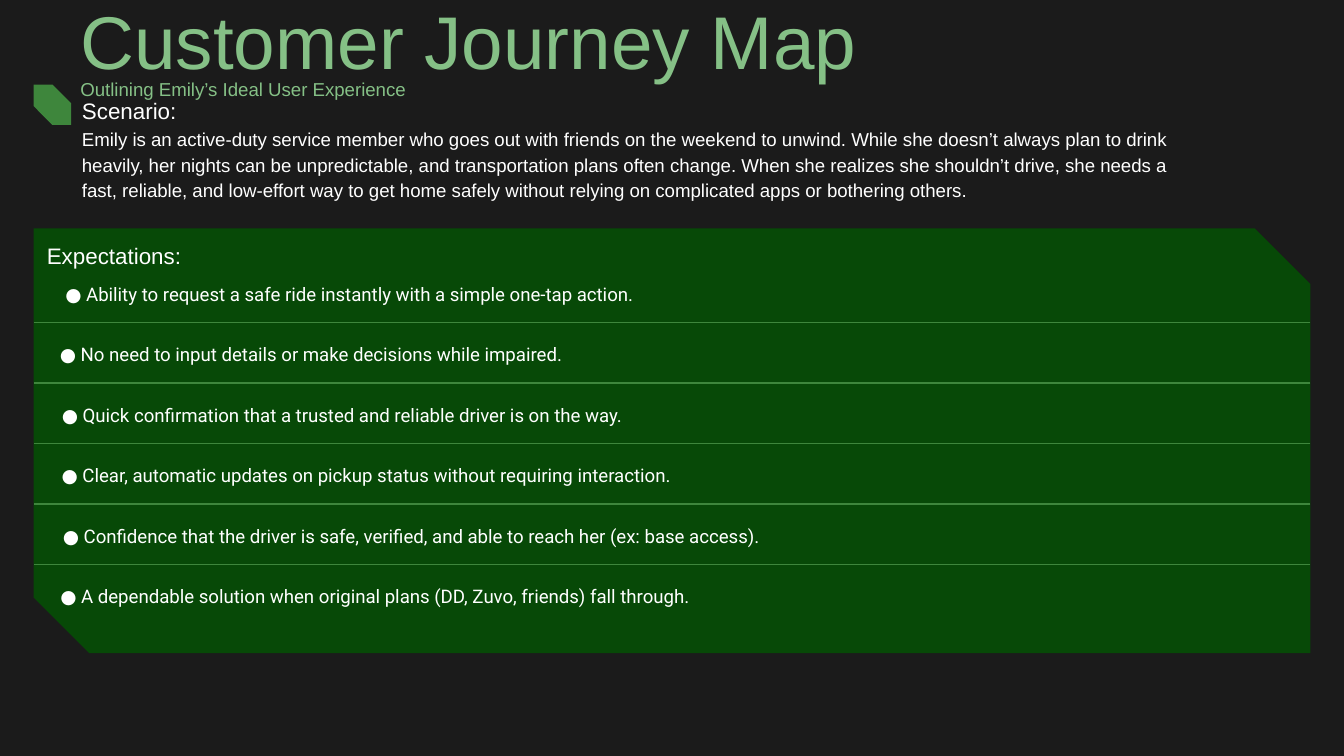
from lxml.etree import SubElement
from pptx import Presentation
from pptx.dml.color import RGBColor
from pptx.enum.shapes import MSO_CONNECTOR, MSO_SHAPE
from pptx.enum.text import MSO_ANCHOR as Anchor, MSO_AUTO_SIZE as AutoSize, PP_ALIGN as Align
from pptx.oxml.ns import qn
from pptx.util import Inches, Pt

BACKGROUND, PANEL, ACCENT, HEADING, WHITE = "1B1B1B", "074907", "3E863C", "85C086", "FFFFFF"

TITLE = "Customer Journey Map"
SUBTITLE = "Outlining Emily’s Ideal User Experience"
SCENARIO = [
    ("Scenario:", 12),
    ("Emily is an active-duty service member who goes out with friends on the weekend to unwind. "
     "While she doesn’t always plan to drink heavily, her nights can be unpredictable, and "
     "transportation plans often change. When she realizes she shouldn’t drive, she needs a fast, "
     "reliable, and low-effort way to get home safely without relying on complicated apps or "
     "bothering others.", 10),
]
# Each expectation with the width of its centred text
EXPECTATIONS = [
    ("Ability to request a safe ride instantly with a simple one-tap action.", 4.39),
    ("No need to input details or make decisions while impaired.", 3.82),
    ("Quick confirmation that a trusted and reliable driver is on the way.", 4.28),
    ("Clear, automatic updates on pickup status without requiring interaction.", 4.64),
    ("Confidence that the driver is safe, verified, and able to reach her (ex: base access).", 5.31),
    ("A dependable solution when original plans (DD, Zuvo, friends) fall through.", 4.77),
]

SLIDE_W = 10
SLIDE_H = SLIDE_W * 9 / 16
MARGIN = 0.25
PANEL_TOP, PANEL_H = 1.7, 3.16
ROW_LEFT, ROW_TOP, ROW_H = 0.42, 1.95, 0.45

PADDED = {"margin_left": Inches(0.1), "margin_top": Inches(0.1),
          "margin_right": Inches(0.1), "margin_bottom": Inches(0.1),
          "vertical_anchor": Anchor.TOP, "auto_size": AutoSize.SHAPE_TO_FIT_TEXT}
FLUSH = {"margin_left": 0, "margin_top": 0, "margin_right": 0, "margin_bottom": 0,
         "auto_size": AutoSize.NONE}


def color(hex_value):
    return RGBColor.from_string(hex_value)


def write(shape, paragraphs, frame_format, hex_value, font="Arial", spacing=1.0, align=Align.LEFT):
    """Fill a shape with (text, point size) paragraphs."""
    frame = shape.text_frame
    frame.word_wrap = True
    for name, value in frame_format.items():
        setattr(frame, name, value)
    for index, (text, size) in enumerate(paragraphs):
        paragraph = frame.add_paragraph() if index else frame.paragraphs[0]
        paragraph.alignment, paragraph.line_spacing = align, spacing
        run = paragraph.add_run()
        run.text = text
        run.font.name, run.font.size = font, Pt(size)
        run.font.color.rgb = color(hex_value)


def add_text(slide, box, *args, **kwargs):
    write(slide.shapes.add_textbox(*map(Inches, box)), *args, **kwargs)


def add_snipped(slide, box, snip, fill):
    shape = slide.shapes.add_shape(MSO_SHAPE.SNIP_2_DIAG_RECTANGLE, *map(Inches, box))
    shape.adjustments[0], shape.adjustments[1] = 0, snip
    shape.shadow.inherit = False
    shape.fill.solid()
    shape.fill.fore_color.rgb = color(fill)
    shape.line.fill.background()


def add_divider(slide, y):
    ends = map(Inches, (SLIDE_W - MARGIN, y, MARGIN, y))
    divider = slide.shapes.add_connector(MSO_CONNECTOR.STRAIGHT, *ends)
    divider.line.color.rgb = color(ACCENT)
    divider.line.width = Pt(0.75)
    SubElement(divider._element.spPr, qn("a:effectLst"))


def main():
    deck = Presentation()
    deck.slide_width, deck.slide_height = Inches(SLIDE_W), Inches(SLIDE_H)
    slide = deck.slides.add_slide(deck.slide_layouts[5])
    slide.background.fill.solid()
    slide.background.fill.fore_color.rgb = color(BACKGROUND)

    title = slide.shapes.title
    title.left, title.top, title.width, title.height = map(Inches, (0.6, -0.06, 6.24, 0.96))
    write(title, [(TITLE, 40)], {**PADDED, "margin_left": 0}, HEADING, spacing=0.9)

    add_snipped(slide, (MARGIN, 0.63, 0.28, 0.3), 0.5, ACCENT)
    add_snipped(slide, (MARGIN, PANEL_TOP, SLIDE_W - 2 * MARGIN, PANEL_H), 0.131, PANEL)

    add_text(slide, (0.61, 1.21, 8.14, 0.29), SCENARIO,
             {**FLUSH, "vertical_anchor": Anchor.BOTTOM}, WHITE, spacing=1.15)

    for row, (expectation, width) in enumerate(EXPECTATIONS):
        top = ROW_TOP + row * ROW_H
        if row:
            add_divider(slide, top)
        add_text(slide, (ROW_LEFT, top, width, ROW_H), [(f"● {expectation} ", 10)],
                 {**FLUSH, "vertical_anchor": Anchor.MIDDLE}, WHITE,
                 font="Roboto", spacing=1.15, align=Align.CENTER)

    add_text(slide, (MARGIN, PANEL_TOP, 1.22, 0.4), [("Expectations:", 12)], PADDED, WHITE)
    add_text(slide, (0.5, 0.52, 5.5, 0.35), [(SUBTITLE, 10)], PADDED, HEADING, spacing=0.9)

    deck.save("out.pptx")


if __name__ == "__main__":
    main()
